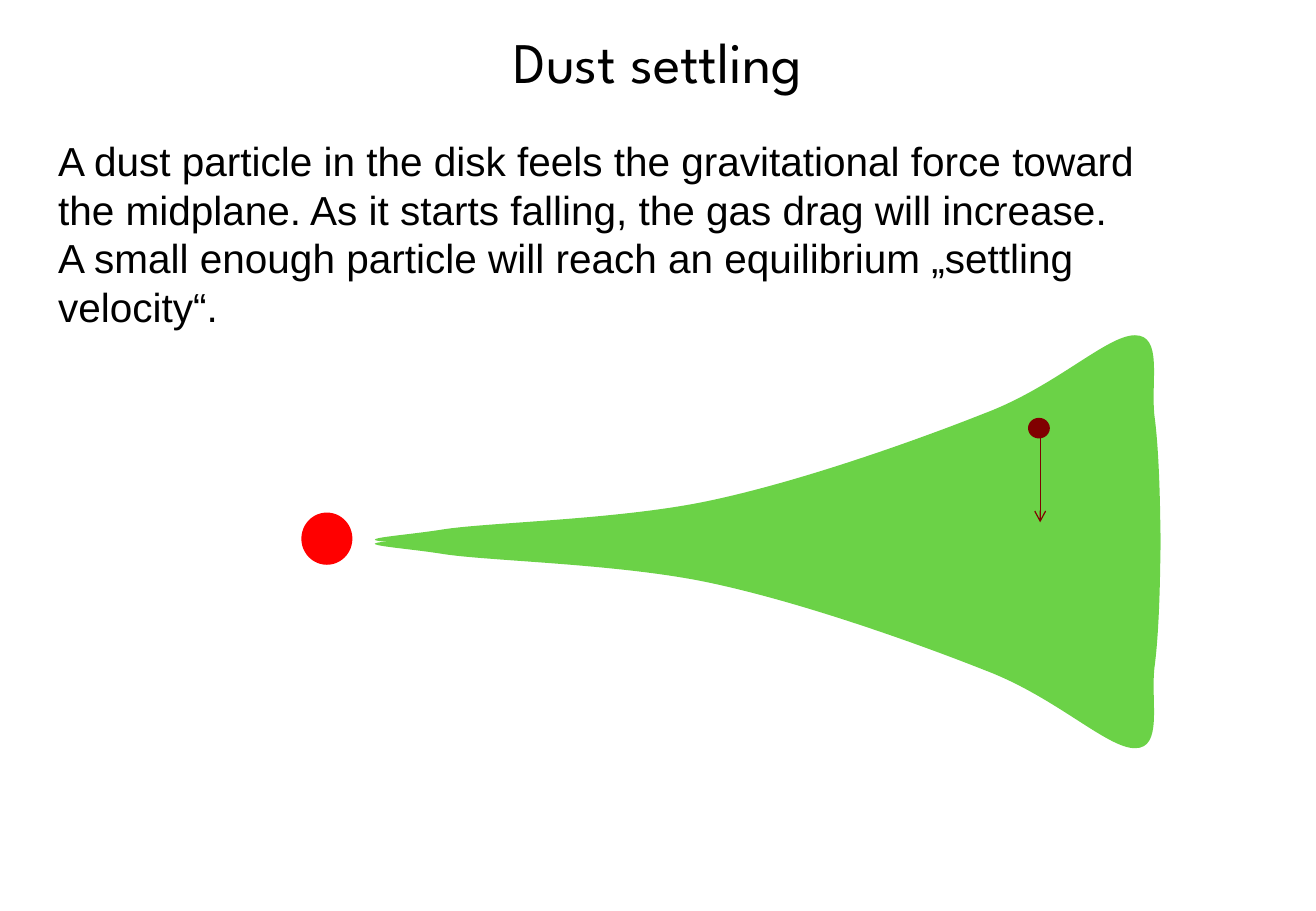
from lxml.etree import SubElement
from pptx import Presentation
from pptx.dml.color import RGBColor
from pptx.enum.shapes import MSO_CONNECTOR, MSO_SHAPE
from pptx.enum.text import MSO_ANCHOR, MSO_AUTO_SIZE, PP_ALIGN
from pptx.oxml.ns import qn
from pptx.util import Inches, Pt

TITLE = "Dust settling"
LINES = [
    "A dust particle in the disk feels the gravitational force toward",
    "the midplane. As it starts falling, the gas drag will increase.",
    "A small enough particle will reach an equilibrium „settling",
    "velocity“.",
]
BLACK, GREEN, RED, MAROON = "000000", "6BD247", "FF0000", "800000"
BODIES = [
    ((2.48, 4.22, 0.42, 0.43), RED),
    ((8.46, 3.44, 0.18, 0.17), MAROON),
]
FALL = (8.56, 3.55, 8.56, 4.3)
MIDPLANE = 4.46
DISK_START = (3.6, 4.48)
DISK_CURVES = [
    ((2.62, 4.45), (3.27, 4.42), (3.64, 4.36)),
    ((4.01, 4.3), (5.11, 4.28), (5.85, 4.12)),
    ((6.6, 3.96), (7.53, 3.63), (8.11, 3.4)),
    ((8.69, 3.18), (9.11, 2.76), (9.34, 2.76)),
    ((9.57, 2.76), (9.47, 3.13), (9.5, 3.42)),
    ((9.54, 3.71), (9.55, 4.19), (9.55, 4.53)),
    ((6.62, 4.54), (4.22, 4.53), DISK_START),
]


def color(value):
    return RGBColor.from_string(value)


def write(box, lines, font, size, align=PP_ALIGN.LEFT, anchor=MSO_ANCHOR.TOP,
          wrap=True, grow=MSO_AUTO_SIZE.NONE, spacing=None):
    frame = box.text_frame
    frame.word_wrap = wrap
    frame.auto_size = grow
    frame.vertical_anchor = anchor
    for index, line in enumerate(lines):
        para = frame.paragraphs[0] if index == 0 else frame.add_paragraph()
        para.alignment = align
        para.line_spacing = spacing
        span = para.add_run()
        span.text = line
        span.font.name = font
        span.font.size = Pt(size)
        span.font.color.rgb = color(BLACK)


def paint(shape, fill):
    shape.shadow.inherit = False
    shape.fill.solid()
    shape.fill.fore_color.rgb = color(fill)
    shape.line.fill.background()


def bend(shape):
    segments = list(shape._element.iter(qn("a:lnTo")))
    for first in range(0, len(segments), 3):
        curve = segments[first].makeelement(qn("a:cubicBezTo"))
        segments[first].addprevious(curve)
        for segment in segments[first:first + 3]:
            curve.append(segment[0])
            segment.getparent().remove(segment)


def add_disk_half(page, side):
    def place(point):
        x, y = point
        return Inches(x), Inches(MIDPLANE + side * (y - MIDPLANE))

    builder = page.shapes.build_freeform(*place(DISK_START))
    outline = [place(point) for curve in DISK_CURVES for point in curve]
    builder.add_line_segments(outline, close=True)
    half = builder.convert_to_shape()
    bend(half)
    paint(half, GREEN)


def add_arrow(page, ends):
    arrow = page.shapes.add_connector(MSO_CONNECTOR.STRAIGHT, *map(Inches, ends))
    arrow.line.color.rgb = color(MAROON)
    arrow.line.width = Pt(0.75)
    SubElement(arrow.line._get_or_add_ln(), qn("a:tailEnd"), type="arrow")
    SubElement(arrow._element.spPr, qn("a:effectLst"))


def main():
    deck = Presentation()
    deck.slide_width, deck.slide_height = Inches(10.83), Inches(7.5)
    page = deck.slides.add_slide(deck.slide_layouts[5])

    title = page.shapes.title
    title.left, title.top, title.width, title.height = map(Inches, (0.36, 0.16, 10.11, 0.67))
    write(title, [TITLE], "League Spartan", 34, align=PP_ALIGN.CENTER, anchor=MSO_ANCHOR.MIDDLE)

    for side in (1, -1):
        add_disk_half(page, side)
    for place, fill in BODIES:
        paint(page.shapes.add_shape(MSO_SHAPE.OVAL, *map(Inches, place)), fill)
    add_arrow(page, FALL)

    box = page.shapes.add_textbox(*map(Inches, (0.38, 1.07, 9.16, 1.72)))
    write(box, LINES, "Arial", 24, wrap=False, grow=MSO_AUTO_SIZE.SHAPE_TO_FIT_TEXT,
          spacing=Pt(28.8))

    deck.save("out.pptx")


if __name__ == "__main__":
    main()
